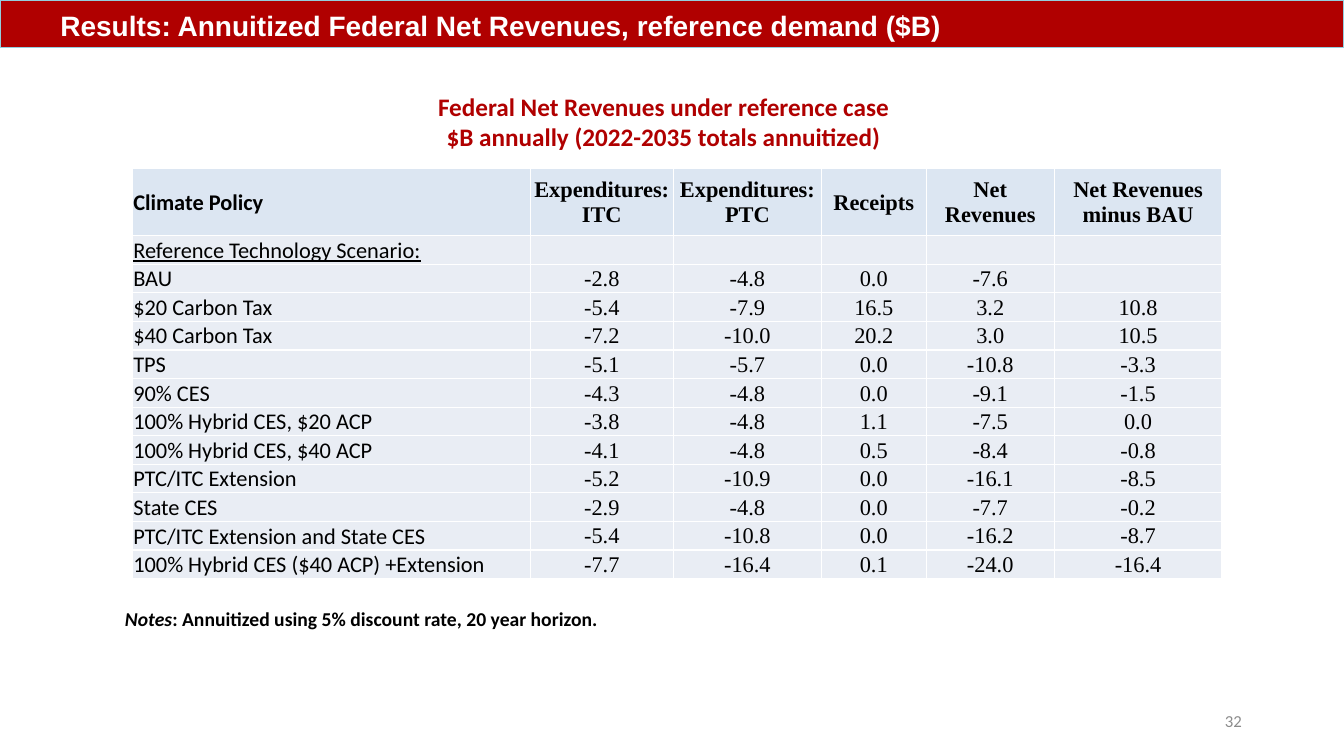
import pptx
import pptx.dml.color
import pptx.enum.text
import pptx.oxml
import pptx.oxml.ns
import pptx.util

Cm = pptx.util.Cm
Pt = pptx.util.Pt
ALIGN = pptx.enum.text.PP_ALIGN
ANCHOR = pptx.enum.text.MSO_ANCHOR

COLORS = {
    "red": "B00000",
    "cyan": "93CDDD",
    "white": "FFFFFF",
    "black": "000000",
    "gray": "8C8C8C",
    "header": "DCE6F2",
    "body": "E9EDF4",
}
COL_WIDTHS = [10.03, 3.61, 3.73, 2.64, 3.23, 4.22]
HEADER_HEIGHT = 1.7
ROW_HEIGHT = 0.72
HEADERS = ["Climate Policy", "Expenditures: ITC", "Expenditures: PTC",
           "Receipts", "Net Revenues", "Net Revenues minus BAU"]
ROWS = [
    ["Reference Technology Scenario:", "", "", "", "", ""],
    ["BAU", "-2.8", "-4.8", "0.0", "-7.6", ""],
    ["$20 Carbon Tax", "-5.4", "-7.9", "16.5", "3.2", "10.8"],
    ["$40 Carbon Tax", "-7.2", "-10.0", "20.2", "3.0", "10.5"],
    ["TPS", "-5.1", "-5.7", "0.0", "-10.8", "-3.3"],
    ["90% CES", "-4.3", "-4.8", "0.0", "-9.1", "-1.5"],
    ["100% Hybrid CES, $20 ACP", "-3.8", "-4.8", "1.1", "-7.5", "0.0"],
    ["100% Hybrid CES, $40 ACP", "-4.1", "-4.8", "0.5", "-8.4", "-0.8"],
    ["PTC/ITC Extension", "-5.2", "-10.9", "0.0", "-16.1", "-8.5"],
    ["State CES", "-2.9", "-4.8", "0.0", "-7.7", "-0.2"],
    ["PTC/ITC Extension and State CES", "-5.4", "-10.8", "0.0", "-16.2", "-8.7"],
    ["100% Hybrid CES ($40 ACP) +Extension", "-7.7", "-16.4", "0.1", "-24.0", "-16.4"],
]


def rgb(name):
    return pptx.dml.color.RGBColor.from_string(COLORS[name])


def format_paragraph(p, size, color, font="Calibri", bold=False, align=ALIGN.LEFT):
    p.alignment = align
    p.font.size = Pt(size)
    p.font.name = font
    p.font.bold = bold
    p.font.color.rgb = rgb(color)


def format_cell(cell, fill, anchor):
    cell.margin_left = cell.margin_right = cell.margin_top = Cm(0.03)
    cell.margin_bottom = 0
    cell.vertical_anchor = anchor
    cell.fill.solid()
    cell.fill.fore_color.rgb = rgb(fill)
    tc_pr = cell._tc.get_or_add_tcPr()
    for i, side in enumerate(("lnL", "lnR", "lnT", "lnB")):
        tc_pr.insert(i, pptx.oxml.parse_xml(
            f'<a:{side} {pptx.oxml.ns.nsdecls("a")} w="12700"><a:solidFill>'
            f'<a:srgbClr val="{COLORS["white"]}"/></a:solidFill></a:{side}>'))


def add_plain_table(s, rows, cols, left, top, width, height):
    table = s.shapes.add_table(rows, cols, Cm(left), Cm(top), Cm(width), Cm(height)).table
    table.first_row = False
    table.horz_banding = False
    return table


def add_title(s, left, top, width, height):
    sp = s.shapes.title
    sp.left, sp.top, sp.width, sp.height = Cm(left), Cm(top), Cm(width), Cm(height)
    sp.fill.solid()
    sp.fill.fore_color.rgb = rgb("red")
    sp.line.color.rgb = rgb("cyan")
    sp.line.width = 0
    tf = sp.text_frame
    tf.text = "Results: Annuitized Federal Net Revenues, reference demand ($B)"
    tf.auto_size = pptx.enum.text.MSO_AUTO_SIZE.NONE
    tf.vertical_anchor = ANCHOR.BOTTOM
    tf.margin_left = Cm(1.52)
    format_paragraph(tf.paragraphs[0], 20, "white", "Arial", True)


def add_text(s, lines, left, top, width, height, size, color, bold, align, anchor):
    tf = s.shapes.add_textbox(Cm(left), Cm(top), Cm(width), Cm(height)).text_frame
    tf.word_wrap = True
    tf.vertical_anchor = anchor
    tf.text = "\n".join(lines)
    for p in tf.paragraphs:
        format_paragraph(p, size, color, bold=bold, align=align)


def add_revenue_table(s, left, top):
    height = HEADER_HEIGHT + ROW_HEIGHT * len(ROWS)
    table = add_plain_table(s, len(ROWS) + 1, len(HEADERS), left, top, sum(COL_WIDTHS), height)
    for column, width in zip(table.columns, COL_WIDTHS):
        column.width = Cm(width)
    for r, values in enumerate([HEADERS] + ROWS):
        header = r == 0
        table.rows[r].height = Cm(HEADER_HEIGHT if header else ROW_HEIGHT)
        for c, value in enumerate(values):
            cell = table.cell(r, c)
            label = c == 0
            format_cell(cell, "header" if header else "body",
                        ANCHOR.BOTTOM if label and r > 2 else ANCHOR.MIDDLE)
            p = cell.text_frame.paragraphs[0]
            p.text = value
            format_paragraph(p, 16, "black", "Calibri" if label else "Times New Roman",
                             header, ALIGN.LEFT if label else ALIGN.CENTER)
    table.cell(1, 0).text_frame.paragraphs[0].font.underline = True


def add_notes_table(s, left, top, width, height):
    table = add_plain_table(s, 1, 1, left, top, width, height)
    cell = table.cell(0, 0)
    format_cell(cell, "white", ANCHOR.TOP)
    p = cell.text_frame.paragraphs[0]
    format_paragraph(p, 14, "black", bold=True)
    r = p.add_run()
    r.text = "Notes"
    r.font.italic = True
    p.add_run().text = ": Annuitized using 5% discount rate, 20 year horizon."


def main():
    prs = pptx.Presentation()
    prs.slide_width, prs.slide_height = Cm(33.87), Cm(19.05)
    s = prs.slides.add_slide(prs.slide_layouts[5])
    add_title(s, 0, 0, 33.87, 1.2)
    add_text(s, ["32"], 23.93, 17.65, 7.62, 1.02, 12, "gray", False, ALIGN.RIGHT, ANCHOR.MIDDLE)
    add_notes_table(s, 3.12, 15.29, 23.27, 0.74)
    add_revenue_table(s, 3.33, 4.24)
    add_text(s, ["Federal Net Revenues under reference case",
                 "$B annually (2022-2035 totals annuitized)"],
             7.34, 2.18, 18.77, 1.8, 18, "red", True, ALIGN.CENTER, ANCHOR.TOP)
    prs.save("out.pptx")


if __name__ == "__main__":
    main()
